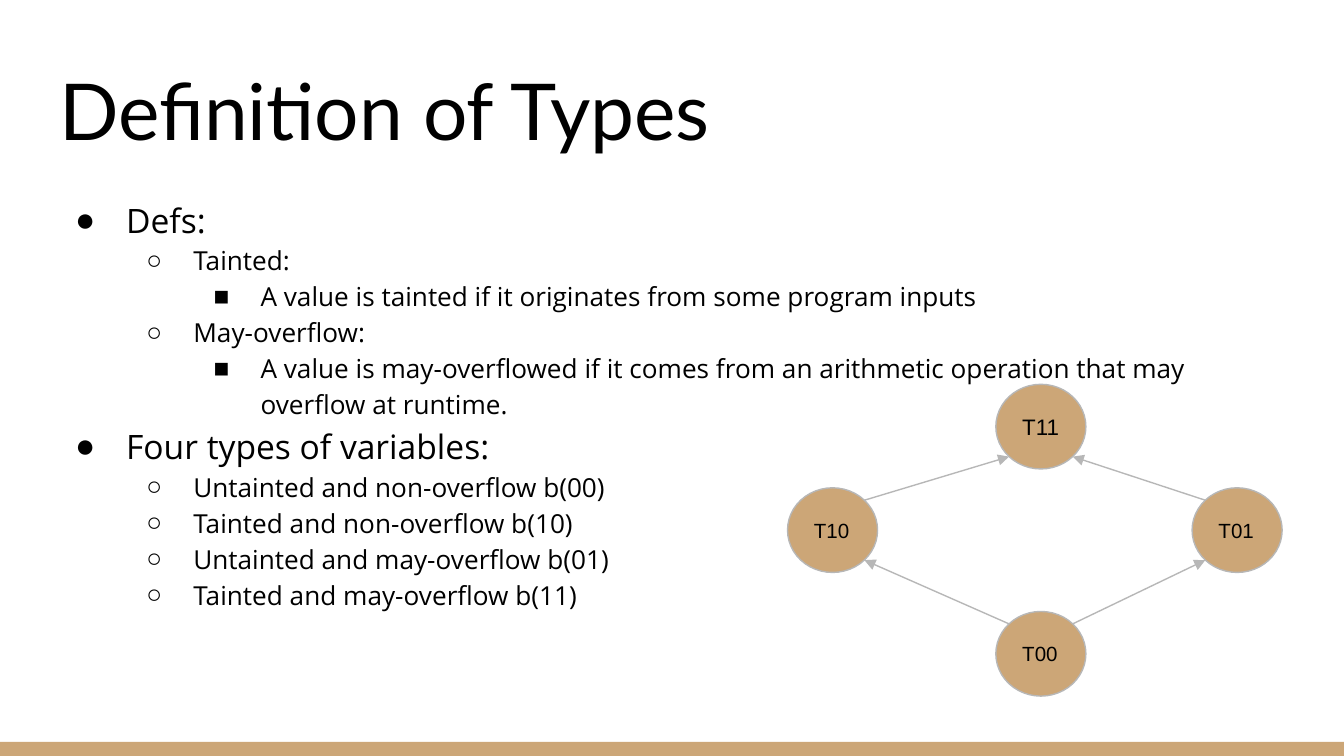
from math import sqrt

from lxml import etree
from pptx import Presentation
from pptx.dml.color import RGBColor
from pptx.enum.shapes import MSO_CONNECTOR, MSO_SHAPE as SHAPE
from pptx.enum.text import MSO_ANCHOR as ANCHOR, PP_ALIGN as ALIGN
from pptx.oxml.ns import qn
from pptx.util import Inches, Pt

TAN, GRAY, BLACK = "CCA677", "B7B7B7", "000000"
MARGIN, CONTENT_WIDTH = 0.34, 9.32

# Bullet, text indent, hanging indent and text size of each outline level
LEVELS = [("●", 0.5, 0.38, 18), ("○", 1, 0.35, 14), ("■", 1.5, 0.35, 14)]
OUTLINE = [
    (0, "Defs:"),
    (1, "Tainted:"),
    (2, "A value is tainted if it originates from some program inputs"),
    (1, "May-overflow:"),
    (2, "A value is may-overflowed if it comes from an arithmetic operation "
        "that may overflow at runtime."),
    (0, "Four types of variables:"),
    (1, "Untainted and non-overflow b(00)"),
    (1, "Tainted and non-overflow b(10)"),
    (1, "Untainted and may-overflow b(01)"),
    (1, "Tainted and may-overflow b(11)"),
]

# Position within the lattice, and text size
NODE_WIDTH, NODE_HEIGHT = 0.67, 0.63
NODES = {
    "T10": (0, 0.77, 11),
    "T11": (1.55, 0, 12),
    "T01": (3.01, 0.77, 11),
    "T00": (1.55, 1.69, 11),
}
EDGES = [("T00", "T10"), ("T00", "T01"), ("T10", "T11"), ("T01", "T11")]


def color(hex_code):
    return RGBColor.from_string(hex_code)


def set_frame(frame, **extra):
    margins = dict.fromkeys(
        ("margin_left", "margin_top", "margin_right", "margin_bottom"), Inches(0.1))
    for key, value in {"word_wrap": True, **margins, **extra}.items():
        setattr(frame, key, value)


def write(paragraph, text, font, size):
    paragraph.alignment = ALIGN.LEFT
    run = paragraph.add_run()
    run.text = text
    for key, value in {"name": font, "size": Pt(size)}.items():
        setattr(run.font, key, value)
    run.font.color.rgb = color(BLACK)


def set_line(line):
    line.color.rgb = color(GRAY)
    line.width = Pt(0.75)


def add_footer_band(slide, left, top, width, height):
    band = slide.shapes.add_shape(
        SHAPE.RECTANGLE, *map(Inches, (left, top, width, height)))
    band.shadow.inherit = False
    band.fill.solid()
    band.fill.fore_color.rgb = color(TAN)
    band.line.fill.background()


def set_title(slide, left, top, width, height):
    title = slide.shapes.title
    box = {"left": left, "top": top, "width": width, "height": height}
    for key, value in box.items():
        setattr(title, key, Inches(value))
    set_frame(title.text_frame, vertical_anchor=ANCHOR.BOTTOM)
    write(title.text_frame.paragraphs[0], "Definition of Types", "Lato", 42)


def set_bullet(paragraph, bullet, indent, hanging):
    properties = paragraph._p.get_or_add_pPr()
    properties.set("marL", str(Inches(indent)))
    properties.set("indent", str(-Inches(hanging)))
    bullet_color = etree.SubElement(properties, qn("a:buClr"))
    etree.SubElement(bullet_color, qn("a:srgbClr"), val=BLACK)
    etree.SubElement(properties, qn("a:buFont"), typeface="Arial")
    etree.SubElement(properties, qn("a:buChar"), char=bullet)


def add_outline(slide, left, top, width, height):
    box = slide.shapes.add_textbox(*map(Inches, (left, top, width, height)))
    frame = box.text_frame
    set_frame(frame)
    for index, (level, text) in enumerate(OUTLINE):
        paragraph = frame.add_paragraph() if index else frame.paragraphs[0]
        bullet, indent, hanging, size = LEVELS[level]
        paragraph.level = level
        paragraph.line_spacing = 1.15
        set_bullet(paragraph, bullet, indent, hanging)
        write(paragraph, text, "Open Sans", size)


def add_node(slide, left, top, label, size):
    node = slide.shapes.add_shape(
        SHAPE.OVAL, *map(Inches, (left, top, NODE_WIDTH, NODE_HEIGHT)))
    node.shadow.inherit = False
    node.fill.solid()
    node.fill.fore_color.rgb = color(TAN)
    set_line(node.line)
    set_frame(node.text_frame, word_wrap=False, vertical_anchor=ANCHOR.MIDDLE)
    write(node.text_frame.paragraphs[0], label, "Arial", size)


def diagonal_point(node, toward):
    """Point on the node's rim, at 45 degrees on the side of the other node."""
    sizes = (NODE_WIDTH, NODE_HEIGHT)
    return [start + size / 2 * (1 + (1 if other > start else -1) / sqrt(2))
            for start, other, size in zip(node, toward, sizes)]


def add_arrow(slide, start, end):
    arrow = slide.shapes.add_connector(
        MSO_CONNECTOR.STRAIGHT, *map(Inches, (*start, *end)))
    set_line(arrow.line)
    etree.SubElement(arrow.line._get_or_add_ln(), qn("a:tailEnd"), type="triangle")
    etree.SubElement(arrow._element.spPr, qn("a:effectLst"))


def add_lattice(slide, left, top):
    places = {}
    for label, (x, y, size) in NODES.items():
        places[label] = (left + x, top + y)
        add_node(slide, *places[label], label, size)
    for lower, upper in EDGES:
        start, end = places[lower], places[upper]
        add_arrow(slide, diagonal_point(start, end), diagonal_point(end, start))


def main():
    deck = Presentation()
    deck.slide_width = Inches(10)
    deck.slide_height = deck.slide_width * 9 // 16
    slide = deck.slides.add_slide(deck.slide_layouts[5])
    add_footer_band(slide, 0, 5.52, 10, 0.11)
    set_title(slide, MARGIN, 0.35, CONTENT_WIDTH, 0.91)
    add_outline(slide, MARGIN, 1.34, CONTENT_WIDTH, 3.67)
    add_lattice(slide, 5.86, 2.86)
    deck.save("out.pptx")


if __name__ == "__main__":
    main()
